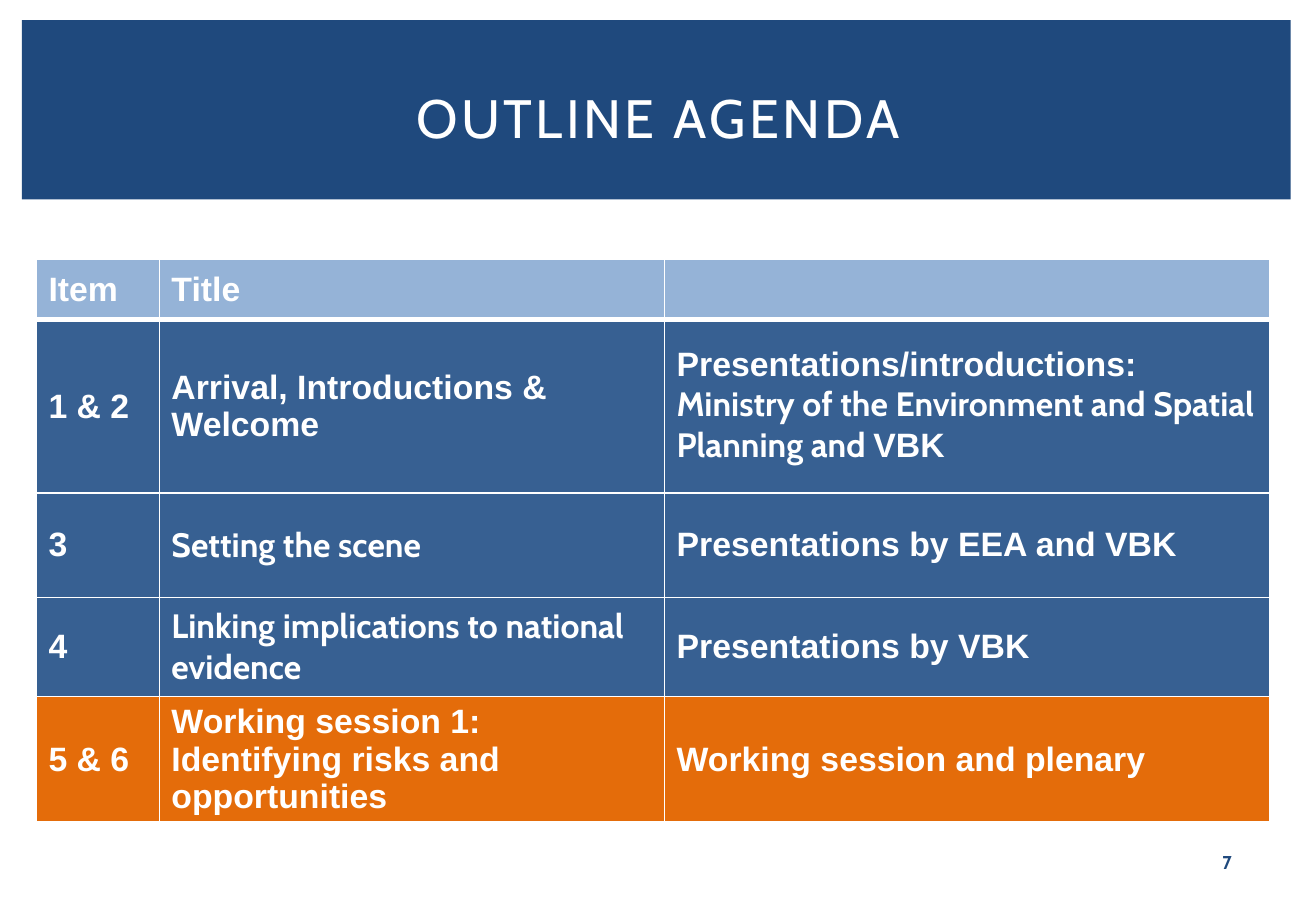
from lxml import etree
from pptx import Presentation
from pptx.dml.color import RGBColor
from pptx.enum import shapes, text
from pptx.oxml import ns
from pptx.util import Cm, Pt

COLOURS = {
    "navy": "1F497D",
    "header": "95B3D7",
    "session": "376092",
    "workshop": "E46C0A",
    "white": "FFFFFF",
    "black": "000000",
}
COLUMN_WIDTHS = [2.57, 10.56, 12.65]
AGENDA = [
    (1.25, "header", [[("Item", "Arial")], [("Title", "Arial")], []]),
    (3.63, "session", [
        [("1 & 2", "Arial")],
        [("Arrival, Introductions & Welcome", "Arial")],
        [("Presentations/introductions:", "Arial"), (" ", "Cabin", 18, "black"),
         ("Ministry of the Environment and Spatial Planning and ", "Cabin"),
         ("VBK", "Arial")],
    ]),
    (2.18, "session", [
        [("3", "Arial")],
        [("Setting the scene", "Cabin")],
        [("Presentations by EEA and VBK", "Arial")],
    ]),
    (2.08, "session", [
        [("4", "Arial")],
        [("Linking implications to national evidence", "Cabin")],
        [("Presentations by VBK", "Arial")],
    ]),
    (1.96, "workshop", [
        [("5 & 6", "Arial")],
        [("Working session 1: Identifying risks and opportunities", "Arial")],
        [("Working session and plenary", "Arial")],
    ]),
]


def colour(name):
    return RGBColor.from_string(COLOURS[name])


def format_run(run, font_name, size=20, colour_name="white", bold=True):
    run.font.name = font_name
    run.font.size = Pt(size)
    run.font.color.rgb = colour(colour_name)
    run.font.bold = bold


def place(shape, left, top, width, height):
    shape.left, shape.top = Cm(left), Cm(top)
    shape.width, shape.height = Cm(width), Cm(height)


def set_borders(cell, widths):
    properties = cell._tc.get_or_add_tcPr()
    for index, (side, width) in enumerate(widths.items()):
        line = etree.Element(ns.qn(f"a:ln{side}"), w=str(Pt(width)))
        fill = etree.SubElement(line, ns.qn("a:solidFill"))
        etree.SubElement(fill, ns.qn("a:srgbClr"), val=COLOURS["white"])
        properties.insert(index, line)


def add_banner(slide, left, top, width, height):
    banner = slide.shapes.add_shape(
        shapes.MSO_SHAPE.RECTANGLE, Cm(left), Cm(top), Cm(width), Cm(height))
    banner.shadow.inherit = False
    banner.fill.solid()
    banner.fill.fore_color.rgb = colour("navy")
    banner.line.fill.background()

    title = slide.shapes.title
    title.element.addprevious(banner.element)
    place(title, left + 0.69, top + 0.56, width - 1.3, height - 0.83)
    frame = title.text_frame
    frame.text = "OUTLINE AGENDA"
    frame.vertical_anchor = text.MSO_ANCHOR.MIDDLE
    paragraph = frame.paragraphs[0]
    paragraph.alignment = text.PP_ALIGN.CENTER
    run = paragraph.runs[0]
    format_run(run, "Cabin", 32, bold=False)
    run.font._element.set("spc", "200")


def fill_cell(cell, pieces, fill_name):
    cell.fill.solid()
    cell.fill.fore_color.rgb = colour(fill_name)
    cell.vertical_anchor = text.MSO_ANCHOR.MIDDLE
    paragraph = cell.text_frame.paragraphs[0]
    for wording, *style in pieces:
        run = paragraph.add_run()
        run.text = wording
        format_run(run, *style)


def add_agenda(slide, left, top, width):
    height = sum(row[0] for row in AGENDA)
    table = slide.shapes.add_table(
        len(AGENDA), len(COLUMN_WIDTHS),
        Cm(left), Cm(top), Cm(width), Cm(height)).table
    for column, column_width in zip(table.columns, COLUMN_WIDTHS):
        column.width = Cm(column_width)
    for index, (row_height, fill_name, cells) in enumerate(AGENDA):
        table.rows[index].height = Cm(row_height)
        widths = {"L": 1, "R": 1,
                  "T": 3 if index == 1 else 1,
                  "B": 3 if index == 0 else 1}
        for cell, pieces in zip(table.rows[index].cells, cells):
            fill_cell(cell, pieces, fill_name)
            set_borders(cell, widths)


def add_page_number(slide, left, top, width, height):
    box = slide.shapes.add_textbox(Cm(left), Cm(top), Cm(width), Cm(height))
    frame = box.text_frame
    frame.word_wrap = True
    frame.vertical_anchor = text.MSO_ANCHOR.MIDDLE
    frame.text = "7"
    paragraph = frame.paragraphs[0]
    paragraph.alignment = text.PP_ALIGN.CENTER
    paragraph.line_spacing = 0.95
    format_run(paragraph.runs[0], "Cabin", 11, "navy")


def main():
    presentation = Presentation()
    presentation.slide_width = Cm(27.51)
    presentation.slide_height = Cm(19.05)
    slide = presentation.slides.add_slide(presentation.slide_layouts[5])
    add_banner(slide, 0.46, 0.42, 26.52, 3.75)
    add_agenda(slide, 0.76, 5.43, sum(COLUMN_WIDTHS))
    add_page_number(slide, 24.78, 17.66, 1.75, 0.76)
    presentation.save("out.pptx")


if __name__ == "__main__":
    main()
